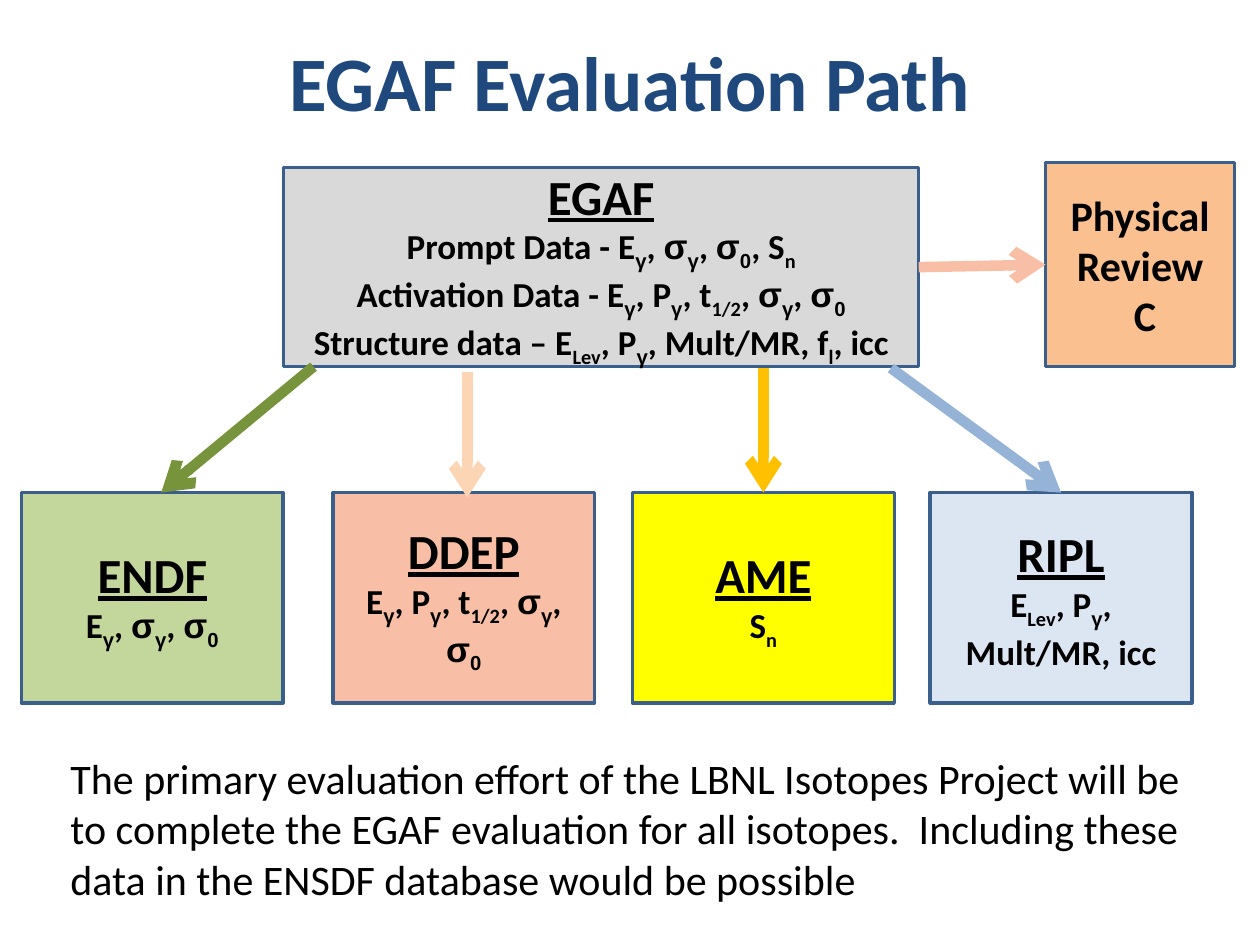
from itertools import groupby

from lxml import etree
from pptx import Presentation
from pptx.dml.color import RGBColor
from pptx.enum.shapes import MSO_CONNECTOR, MSO_SHAPE
from pptx.enum.text import MSO_ANCHOR, PP_ALIGN
from pptx.oxml.ns import qn
from pptx.util import Cm, Pt

RECT = MSO_SHAPE.RECTANGLE
LINE = MSO_CONNECTOR.STRAIGHT
MIDDLE = MSO_ANCHOR.MIDDLE
TOP = MSO_ANCHOR.TOP
CENTER = PP_ALIGN.CENTER
LEFT = PP_ALIGN.LEFT

ARIAL_SIGNS = "γσ0"
EDGE = "3A5F8C"
BLACK = "000000"
PEACH = "F8BFA6"
ROW_TOP, ROW_WIDTH, ROW_HEIGHT = 9.93, 5.28, 4.24

DATA = [
    "Prompt Data - E~γ~, σ~γ~, σ~0~, S~n~",
    "Activation Data - E~γ~, P~γ~, t~1/2~, σ~γ~, σ~0~",
    "Structure data – E~Lev~, P~γ~, Mult/MR, f~l~, icc",
]
# name, formula, left, fill, arrow colour, arrow start, arrow end, joined
TARGETS = [
    ("ENDF", "E~γ~, σ~γ~, σ~0~", 0.43, "C3D69B",
     "77933C", (6.32, 7.39), (3.25, 9.93), False),
    ("DDEP", "E~γ~, P~γ~, t~1/2~, σ~γ~, σ~0~", 6.71, PEACH,
     "FCD5B5", (9.42, 7.49), (9.42, 10.03), False),
    ("AME", "S~n~", 12.75, "FFFF00",
     "FFC000", (15.39, 7.42), (15.39, 9.93), True),
    ("RIPL", "E~Lev~, P~γ~, Mult/MR, icc", 18.75, "DCE6F2",
     "95B3D7", (17.96, 7.42), (21.39, 9.93), True),
]
NOTE = ("The primary evaluation effort of the LBNL Isotopes Project will be "
        "to complete the EGAF evaluation for all isotopes.  Including these "
        "data in the ENSDF database would be possible")


def paint(color, value):
    """Set a colour from a hex string."""
    color.rgb = RGBColor.from_string(value)


def add_run(para, text, face, size, color, bold, under=False, sub=False):
    """Add one run of text to a paragraph."""
    run = para.add_run()
    run.text = text
    font = run.font
    font.name, font.size, font.bold = face, Pt(size), bold
    font.underline = under
    paint(font.color, color)
    if sub:
        run._r.get_or_add_rPr().set("baseline", "-25000")


def add_lines(frame, lines, size, color=BLACK, bold=True, align=CENTER,
              head=None):
    """Write lines under an optional heading; tildes enclose subscripts."""
    frame.word_wrap = True
    para = frame.paragraphs[0]
    para.alignment = align
    if head:
        add_run(para, head, "Calibri", 28, color, True, under=True)
    for index, line in enumerate(lines):
        if head or index:
            para = frame.add_paragraph()
            para.alignment = align
        for order, part in enumerate(line.split("~")):
            for sign, chars in groupby(part, lambda c: c in ARIAL_SIGNS):
                face = "Arial" if sign else "Calibri"
                add_run(para, "".join(chars), face, size, color, bold,
                        sub=order % 2 == 1)


def add_text(slide, place, text, size, color, bold, align, anchor):
    """Add a text box."""
    frame = slide.shapes.add_textbox(*map(Cm, place)).text_frame
    frame.vertical_anchor = anchor
    add_lines(frame, [text], size, color, bold, align)


def add_box(slide, place, fill, lines, size=20, head=None):
    """Add a filled and outlined rectangle with text."""
    box = slide.shapes.add_shape(RECT, *map(Cm, place))
    box.shadow.inherit = False
    box.fill.solid()
    paint(box.fill.fore_color, fill)
    paint(box.line.color, EDGE)
    box.line.width = Pt(2)
    box.text_frame.vertical_anchor = MIDDLE
    add_lines(box.text_frame, lines, size, head=head)
    return box


def add_arrow(slide, start, end, color):
    """Add a thick straight arrow."""
    arrow = slide.shapes.add_connector(LINE, *map(Cm, start + end))
    arrow.line.width = Pt(6)
    paint(arrow.line.color, color)
    tail = etree.SubElement(arrow.line._get_or_add_ln(), qn("a:tailEnd"))
    tail.set("type", "arrow")
    etree.SubElement(arrow._element.spPr, qn("a:effectLst"))
    return arrow


def main():
    """Build the slide and save it."""
    deck = Presentation()
    deck.slide_width, deck.slide_height = Cm(25.4), Cm(19.05)
    slide = deck.slides.add_slide(deck.slide_layouts[6])
    add_text(slide, (1.27, 0.03, 22.86, 3.18), "EGAF Evaluation Path",
             44, "1F497D", True, CENTER, MIDDLE)
    hub = add_box(slide, (5.72, 3.38, 12.8, 4.01), "D9D9D9", DATA,
                  head="EGAF")
    boxes = [add_box(slide, (left, ROW_TOP, ROW_WIDTH, ROW_HEIGHT), fill,
                     [formula], head=name)
             for name, formula, left, fill, *_ in TARGETS]
    for box, (*_, color, start, end, joined) in zip(boxes, TARGETS):
        arrow = add_arrow(slide, start, end, color)
        if joined:
            arrow.end_connect(box, 0)
    add_text(slide, (1.17, 15.04, 23.37, 3.33), NOTE,
             24, BLACK, False, LEFT, TOP)
    journal = add_box(slide, (21.08, 3.28, 3.81, 4.11), "FAC090",
                      ["Physical Review", " C"], size=24)
    link = add_arrow(slide, (18.52, 5.38), (21.08, 5.33), PEACH)
    link.begin_connect(hub, 3)
    link.end_connect(journal, 1)
    deck.save("out.pptx")


if __name__ == "__main__":
    main()
